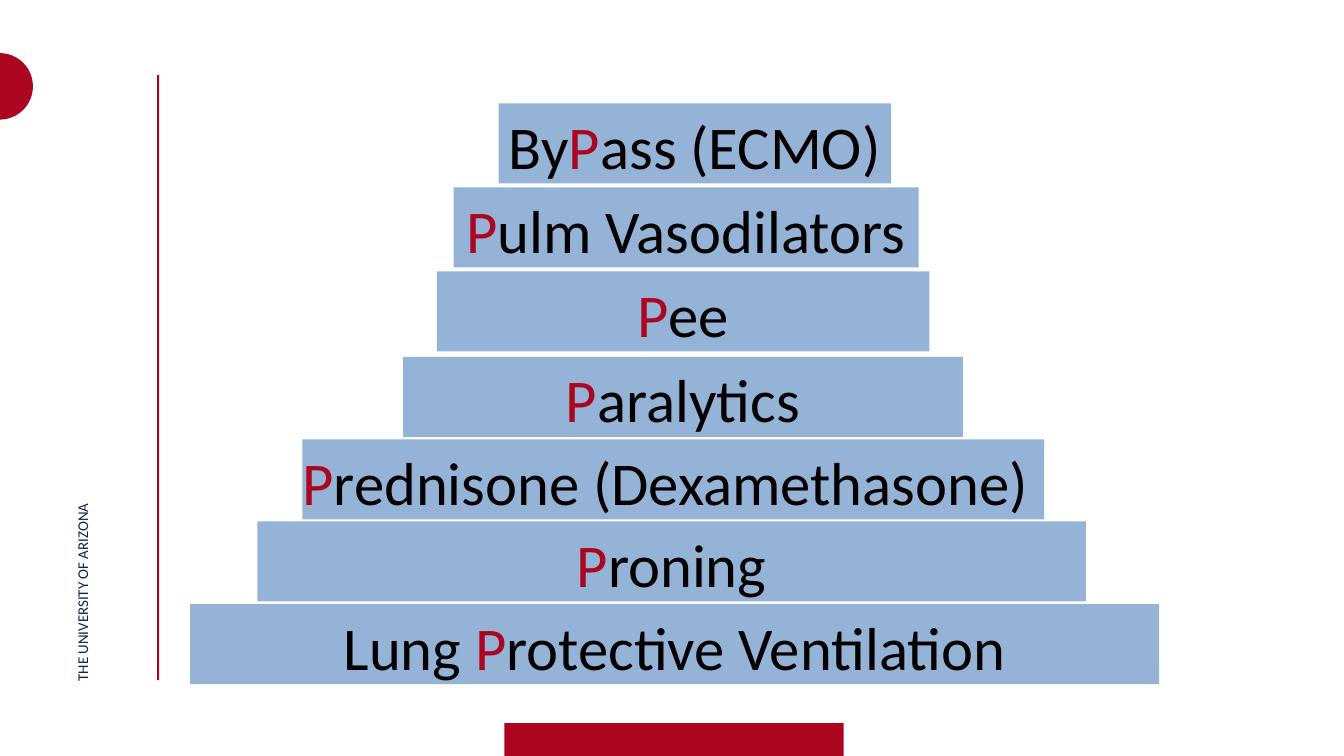
from dataclasses import dataclass

import pptx
import pptx.dml.color
import pptx.enum.shapes
import pptx.enum.text
import pptx.util
from pptx.util import Inches

SHAPE = pptx.enum.shapes.MSO_SHAPE
ALIGN = pptx.enum.text.PP_ALIGN
ANCHOR = pptx.enum.text.MSO_ANCHOR


def rgb(code):
    return pptx.dml.color.RGBColor.from_string(code)


@dataclass(frozen=True)
class Theme:
    font: str = "Calibri"
    red: str = "AB0520"
    navy: str = "0C234A"
    blue: str = "95B3D7"
    black: str = "000000"
    step_size: int = 65
    side_size: int = 16


THEME = Theme()

# left, top, width, text before the P, text after it, alignment
STEPS = [
    (2.83, 8.99, 14.42, "Lung ", "rotective Ventilation", ALIGN.CENTER),
    (3.83, 7.76, 12.33, "", "roning", ALIGN.CENTER),
    (4.5, 6.54, 11.04, "", "rednisone (Dexamethasone)", ALIGN.LEFT),
    (6, 5.31, 8.33, "", "aralytics", ALIGN.CENTER),
    (6.5, 4.04, 7.33, "", "ee", ALIGN.CENTER),
    (6.75, 2.79, 6.92, "", "ulm Vasodilators", ALIGN.CENTER),
    (7.42, 1.54, 5.84, "By", "ass (ECMO)", ALIGN.CENTER),
]
STEP_HEIGHT = 1.19


def add_block(s, kind, left, top, width, height, color):
    sp = s.shapes.add_shape(kind, Inches(left), Inches(top), Inches(width), Inches(height))
    sp.shadow.inherit = False
    sp.fill.solid()
    sp.fill.fore_color.rgb = rgb(color)
    sp.line.fill.background()
    return sp


def set_insets(tf, top):
    tf.margin_left = tf.margin_right = tf.margin_bottom = 0
    tf.margin_top = Inches(top)


def add_frame(s, left, top, width, height):
    """Red circle, rule and bottom bar around the slide area."""
    add_block(s, SHAPE.OVAL, left - 0.5, top + 0.79, 0.99, 0.99, THEME.red)
    add_block(s, SHAPE.RECTANGLE, left + 2.34, top + 1.12, 0.03, 9, THEME.red)
    add_block(s, SHAPE.RECTANGLE, left + (width - 5.05) / 2 + 0.03, top + height - 0.49,
              5.05, 0.49, THEME.red)


def add_side_label(s, left, top, width, height):
    tf = s.shapes.add_textbox(Inches(left), Inches(top), Inches(width), Inches(height)).text_frame
    tf.word_wrap = True
    set_insets(tf, 0.01)
    tf._txBody.bodyPr.set("vert", "vert270")
    p = tf.paragraphs[0]
    p.text = "THE UNIVERSITY OF ARIZONA"
    p.font.name = THEME.font
    p.font.size = pptx.util.Pt(THEME.side_size)
    p.font.color.rgb = rgb(THEME.navy)


def add_step(s, left, top, width, height, before, after, align):
    """One pyramid step whose key letter P is red."""
    sp = add_block(s, SHAPE.RECTANGLE, left, top, width, height, THEME.blue)
    tf = sp.text_frame
    tf.word_wrap = True
    tf.vertical_anchor = ANCHOR.TOP
    set_insets(tf, 0.08)
    p = tf.paragraphs[0]
    p.alignment = align
    p.font.name = THEME.font
    p.font.size = pptx.util.Pt(THEME.step_size)
    for text, color in ((before, THEME.black), ("P", THEME.red), (after, THEME.black)):
        if text:
            r = p.add_run()
            r.text = text
            r.font.color.rgb = rgb(color)


def main():
    prs = pptx.Presentation()
    prs.slide_width, prs.slide_height = Inches(20), Inches(11.25)
    s = prs.slides.add_slide(prs.slide_layouts[6])
    add_frame(s, 0, 0, 20, 11.25)
    add_side_label(s, 1.09, 3.88, 0.27, 6.26)
    for left, top, width, before, after, align in STEPS:
        add_step(s, left, top, width, STEP_HEIGHT, before, after, align)
    prs.save("out.pptx")


if __name__ == "__main__":
    main()
